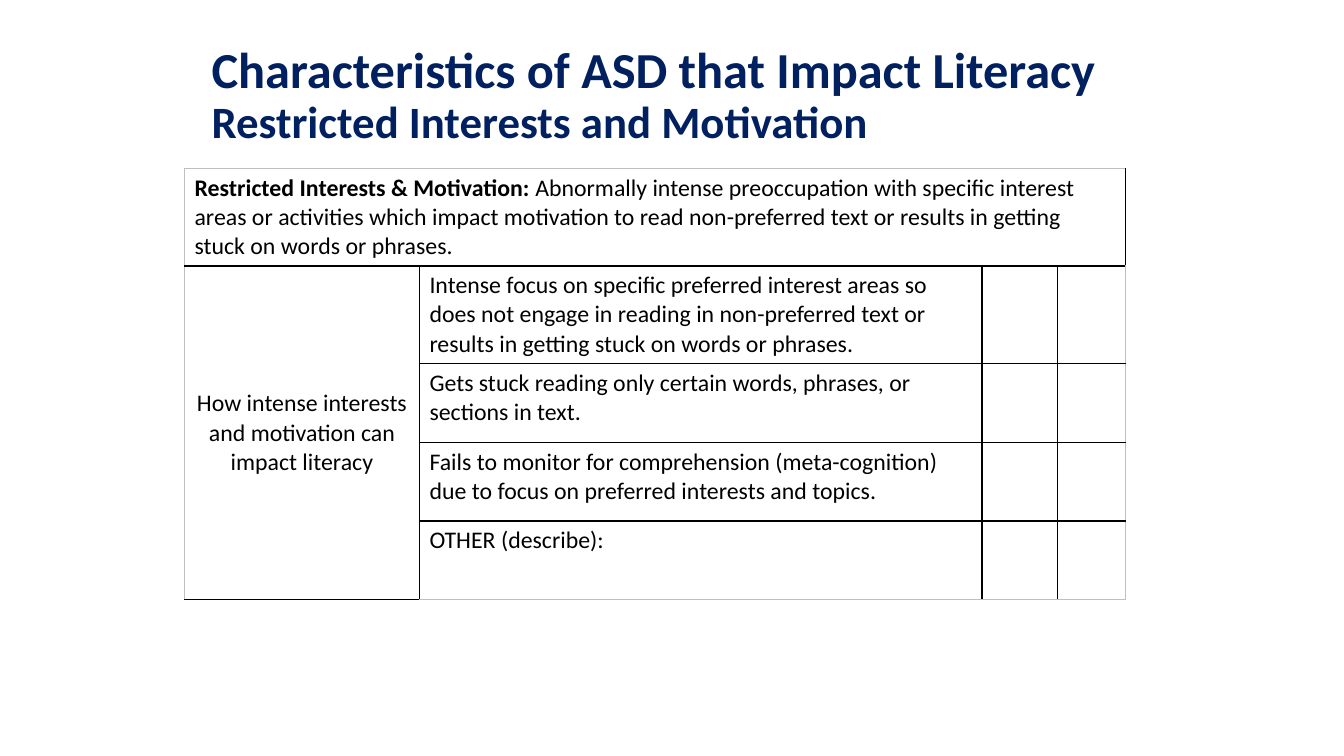
import pptx
import pptx.util
import pptx.dml.color
import pptx.enum.text
import pptx.oxml
import pptx.oxml.ns

Inches = pptx.util.Inches
ALIGN = pptx.enum.text.PP_ALIGN
ANCHOR = pptx.enum.text.MSO_ANCHOR
HUES = {"navy": "002060", "ink": "000000", "edge": "BFBFBF", "paper": "FFFFFF"}

WIDTHS = [2.33, 5.58, 0.75, 0.67]
HEIGHTS = [0.97, 0.97, 0.78, 0.78, 0.78]
TOPIC = [
    ("Restricted Interests & Motivation: ", True),
    ("Abnormally intense preoccupation with specific interest areas or activities "
     "which impact motivation to read non-preferred text or results in getting "
     "stuck on words or phrases.", False),
]
IMPACT = "How intense interests and motivation can impact literacy"
SIGNS = [
    "Intense focus on specific preferred interest areas so does not engage in "
    "reading in non-preferred text or results in getting stuck on words or phrases.",
    "Gets stuck reading only certain words, phrases, or sections in text.",
    "Fails to monitor for comprehension (meta-cognition) due to focus on "
    "preferred interests and topics.",
    "OTHER (describe):",
]


class Page:
    """Holds the text style and the slide being built."""

    def __init__(self, slide, font="Calibri", size=17):
        self.slide, self.font, self.size = slide, font, size

    def run(self, para, text, size=None, bold=False, hue="ink"):
        run = para.add_run()
        run.text = text
        style = {"name": self.font, "size": pptx.util.Pt(size or self.size), "bold": bold}
        for key, value in style.items():
            setattr(run.font, key, value)
        run.font.color.rgb = pptx.dml.color.RGBColor.from_string(HUES[hue])

    def title(self, box, lines):
        frame = self.slide.shapes.add_textbox(*map(Inches, box)).text_frame
        for key, value in {"word_wrap": True, "vertical_anchor": ANCHOR.MIDDLE}.items():
            setattr(frame, key, value)
        para = frame.paragraphs[0]
        para.line_spacing = 0.9
        for index, (text, size) in enumerate(lines):
            if index:
                para.add_line_break()
            self.run(para, text, size, True, "navy")

    def table(self, left, top, widths, heights):
        shape = self.slide.shapes.add_table(
            len(heights), len(widths), Inches(left), Inches(top),
            Inches(sum(widths)), Inches(sum(heights)))
        grid = shape.table
        grid.first_row = grid.horz_banding = False
        for col, width in zip(grid.columns, widths):
            col.width = Inches(width)
        for row, height in zip(grid.rows, heights):
            row.height = Inches(height)
        for r in range(len(heights)):
            for c in range(len(widths)):
                cell = grid.cell(r, c)
                cell.fill.solid()
                cell.fill.fore_color.rgb = pptx.dml.color.RGBColor.from_string(HUES["paper"])
                outer = {"L": c == 0, "R": c == len(widths) - 1,
                         "T": r == 0, "B": r == len(heights) - 1}
                self.border(cell, outer)
        return grid

    def border(self, cell, outer):
        """Draws grey lines on the outer sides and black lines on the inner ones."""
        props = cell._tc.get_or_add_tcPr()
        for index, (side, edge) in enumerate(outer.items()):
            hue = HUES["edge" if edge else "ink"]
            props.insert(index, pptx.oxml.parse_xml(
                f'<a:ln{side} {pptx.oxml.ns.nsdecls("a")} w="{pptx.util.Pt(1)}">'
                f'<a:solidFill><a:srgbClr val="{hue}"/></a:solidFill></a:ln{side}>'))

    def fill(self, cell, parts, align=ALIGN.LEFT, anchor=ANCHOR.TOP):
        """Writes (text, bold) parts into a cell."""
        cell.vertical_anchor = anchor
        para = cell.text_frame.paragraphs[0]
        para.alignment = align
        for text, bold in parts:
            self.run(para, text, bold=bold)


def main():
    deck = pptx.Presentation()
    deck.slide_width, deck.slide_height = Inches(13.33), Inches(7.5)
    page = Page(deck.slides.add_slide(deck.slide_layouts[6]))
    page.title((2, 0.33, 9, 1.25), [
        ("Characteristics of ASD that Impact Literacy", 36),
        ("Restricted Interests and Motivation", 32),
    ])
    grid = page.table(1.83, 1.67, WIDTHS, HEIGHTS)
    grid.cell(0, 0).merge(grid.cell(0, 3))
    grid.cell(1, 0).merge(grid.cell(4, 0))
    page.fill(grid.cell(0, 0), TOPIC)
    page.fill(grid.cell(1, 0), [(IMPACT, False)], ALIGN.CENTER, ANCHOR.MIDDLE)
    for row, sign in enumerate(SIGNS, 1):
        page.fill(grid.cell(row, 1), [(sign, False)])
    deck.save("out.pptx")


if __name__ == "__main__":
    main()
